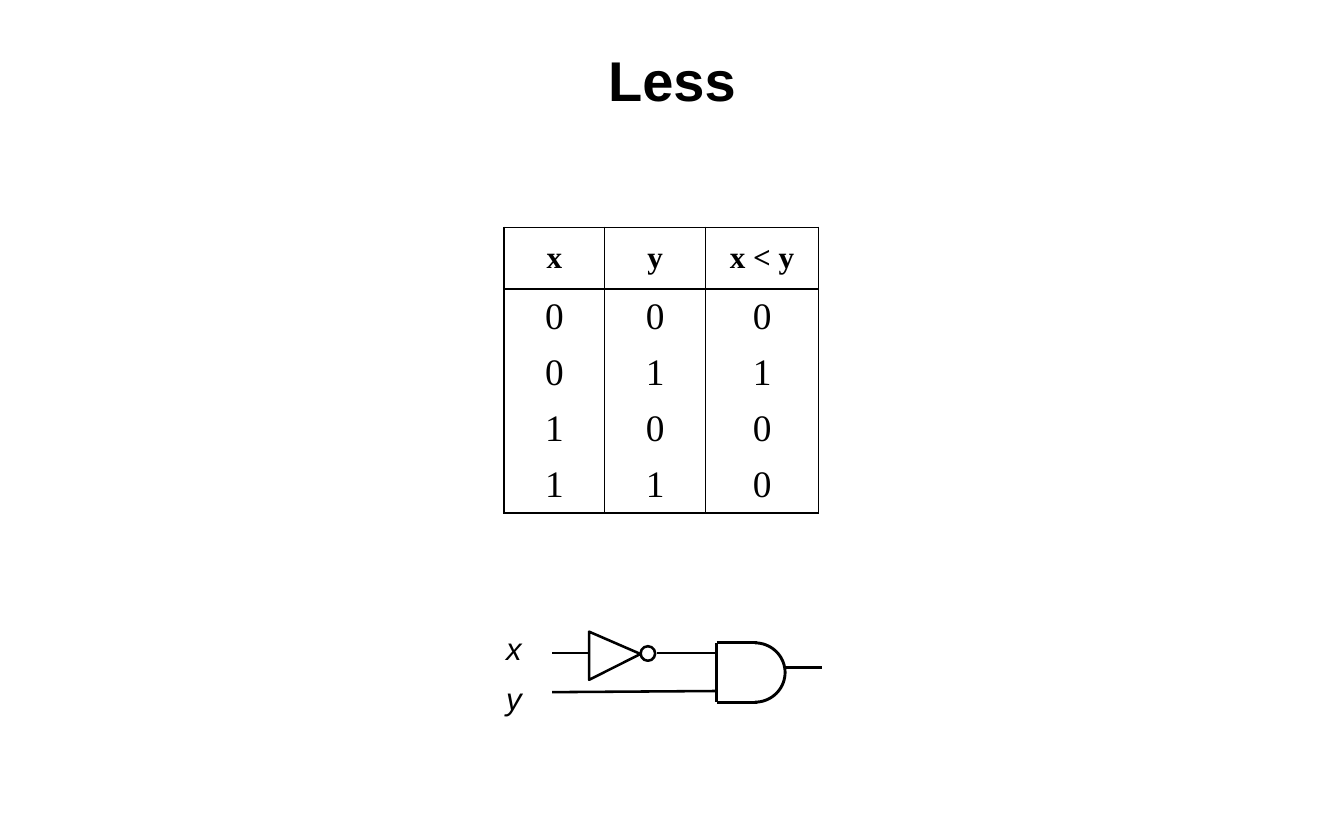
import math
from dataclasses import dataclass

import lxml.etree
import pptx
import pptx.dml.color
import pptx.enum.shapes
import pptx.enum.text
import pptx.oxml
import pptx.oxml.ns
import pptx.util

Inches = pptx.util.Inches
Pt = pptx.util.Pt
qn = pptx.oxml.ns.qn


@dataclass(frozen=True)
class Theme:
    """Fonts, colours, type sizes and line widths of the slide."""
    sans: str = "Arial"
    serif: str = "Times New Roman"
    ink: str = "000000"
    paper: str = "FFFFFF"
    title_size: float = 36
    header_size: float = 20
    value_size: float = 24
    label_size: float = 20
    border: float = 1
    wire: float = 1.63
    gate: float = 1.88


class SlideBuilder:
    """Draws themed elements on one slide."""

    def __init__(self, slide, theme):
        self.slide = slide
        self.theme = theme

    def colour(self, value):
        return pptx.dml.color.RGBColor.from_string(value)

    def add_run(self, paragraph, text, font, size, bold=False, italic=False):
        run = paragraph.add_run()
        run.text = text
        run.font.name = font
        run.font.size = Pt(size)
        run.font.bold = bold
        run.font.italic = italic
        run.font.color.rgb = self.colour(self.theme.ink)

    def title(self, text, left, top, width, height):
        shape = self.slide.shapes.title
        shape.left, shape.top = Inches(left), Inches(top)
        shape.width, shape.height = Inches(width), Inches(height)
        shape.text_frame.vertical_anchor = pptx.enum.text.MSO_ANCHOR.MIDDLE
        paragraph = shape.text_frame.paragraphs[0]
        paragraph.alignment = pptx.enum.text.PP_ALIGN.CENTER
        self.add_run(paragraph, text, self.theme.sans, self.theme.title_size, bold=True)

    def label(self, text, left, top, width, height):
        shape = self.slide.shapes.add_textbox(
            Inches(left), Inches(top), Inches(width), Inches(height))
        shape.text_frame.word_wrap = False
        shape.text_frame.auto_size = pptx.enum.text.MSO_AUTO_SIZE.SHAPE_TO_FIT_TEXT
        self.add_run(shape.text_frame.paragraphs[0], text, self.theme.sans,
                     self.theme.label_size, italic=True)

    def cell_borders(self, cell, visible):
        properties = cell._tc.get_or_add_tcPr()
        for side in "LRTB":
            line = lxml.etree.SubElement(properties, qn(f"a:ln{side}"))
            line.set("w", str(Pt(self.theme.border)))
            if side in visible:
                fill = lxml.etree.SubElement(line, qn("a:solidFill"))
                lxml.etree.SubElement(fill, qn("a:srgbClr")).set("val", self.theme.ink)
            else:
                lxml.etree.SubElement(line, qn("a:noFill"))

    def truth_table(self, rows, left, top, widths, heights):
        table = self.slide.shapes.add_table(
            len(rows), len(widths), Inches(left), Inches(top),
            Inches(sum(widths)), Inches(sum(heights))).table
        table.first_row = False
        table.horz_banding = False
        for column, width in zip(table.columns, widths):
            column.width = Inches(width)
        for index, (values, height) in enumerate(zip(rows, heights)):
            table.rows[index].height = Inches(height)
            header = index == 0
            visible = "LR" + ("T" if index < 2 else "")
            if header or index == len(rows) - 1:
                visible += "B"
            for position, value in enumerate(values):
                cell = table.cell(index, position)
                cell.vertical_anchor = pptx.enum.text.MSO_ANCHOR.MIDDLE
                self.cell_borders(cell, visible)
                cell.fill.background()
                paragraph = cell.text_frame.paragraphs[0]
                paragraph.alignment = pptx.enum.text.PP_ALIGN.CENTER
                paragraph.space_before = Pt(6 if header else 12)
                size = self.theme.header_size if header else self.theme.value_size
                self.add_run(paragraph, value, self.theme.serif, size, bold=header)

    def line(self, start, end, width):
        connector = self.slide.shapes.add_connector(
            pptx.enum.shapes.MSO_CONNECTOR.STRAIGHT,
            *(Inches(value) for value in (*start, *end)))
        connector.line.color.rgb = self.colour(self.theme.ink)
        connector.line.width = Pt(width)
        lxml.etree.SubElement(connector._element.spPr, qn("a:effectLst"))

    def outline(self, shape, width, fill=None):
        shape.shadow.inherit = False
        shape.line.color.rgb = self.colour(self.theme.ink)
        shape.line.width = Pt(width)
        if fill:
            shape.fill.solid()
            shape.fill.fore_color.rgb = self.colour(fill)
        else:
            shape.fill.background()

    def freeform(self, points, width, close=False, fill=None):
        points = [(Inches(x), Inches(y)) for x, y in points]
        builder = self.slide.shapes.build_freeform(*points[0])
        builder.add_line_segments(points[1:], close=close)
        self.outline(builder.convert_to_shape(), width, fill)

    def circle(self, left, top, diameter, width):
        shape = self.slide.shapes.add_shape(
            pptx.enum.shapes.MSO_SHAPE.OVAL, Inches(left), Inches(top),
            Inches(diameter), Inches(diameter))
        self.outline(shape, width)

    def and_gate(self, left, top, bottom, arc_start, arc_radius):
        middle, half = (top + bottom) / 2, (bottom - top) / 2
        angles = [math.radians(degrees) for degrees in range(-90, 91, 5)]
        self.freeform([(arc_start + arc_radius * math.cos(angle),
                        middle + half * math.sin(angle)) for angle in angles],
                      self.theme.gate)
        for start, end in (((left, top), (arc_start + 0.02, top)),
                           ((left, top), (left, bottom)),
                           ((left, bottom), (arc_start + 0.02, bottom))):
            self.line(start, end, self.theme.gate)

    def not_gate(self, left, top, bottom, tip, bubble):
        self.freeform([(tip, 5.84), (left, bottom), (left, top)],
                      self.theme.wire, close=True, fill=self.theme.paper)
        self.circle(tip, 5.77, bubble, self.theme.wire)


def main():
    presentation = pptx.Presentation()
    presentation.slide_width = Inches(12)
    presentation.slide_height = Inches(7.5)
    slide = presentation.slides.add_slide(presentation.slide_layouts[5])
    theme = Theme()
    builder = SlideBuilder(slide, theme)

    builder.title("Less", 0, 0.33, 12, 0.75)
    inputs = [(x, y) for x in (0, 1) for y in (0, 1)]
    rows = [("x", "y", "x < y")]
    rows += [(str(x), str(y), str(int(x < y))) for x, y in inputs]
    builder.truth_table(rows, 4.5, 2.03, (0.9, 0.9, 1.01), (0.55,) + (0.5,) * 4)

    for start, end in (((7.02, 5.96), (7.34, 5.96)),
                       ((5.87, 5.83), (6.39, 5.83)),
                       ((4.93, 6.18), (6.39, 6.17)),
                       ((4.93, 5.83), (5.27, 5.83))):
        builder.line(start, end, theme.wire)
    builder.and_gate(6.4, 5.74, 6.27, 6.74, 0.27)
    builder.not_gate(5.26, 5.64, 6.07, 5.72, 0.13)
    for text, top in (("x", 5.57), ("y", 6.02)):
        builder.label(text, 4.42, top, 0.34, 0.44)

    presentation.save("out.pptx")


if __name__ == "__main__":
    main()
